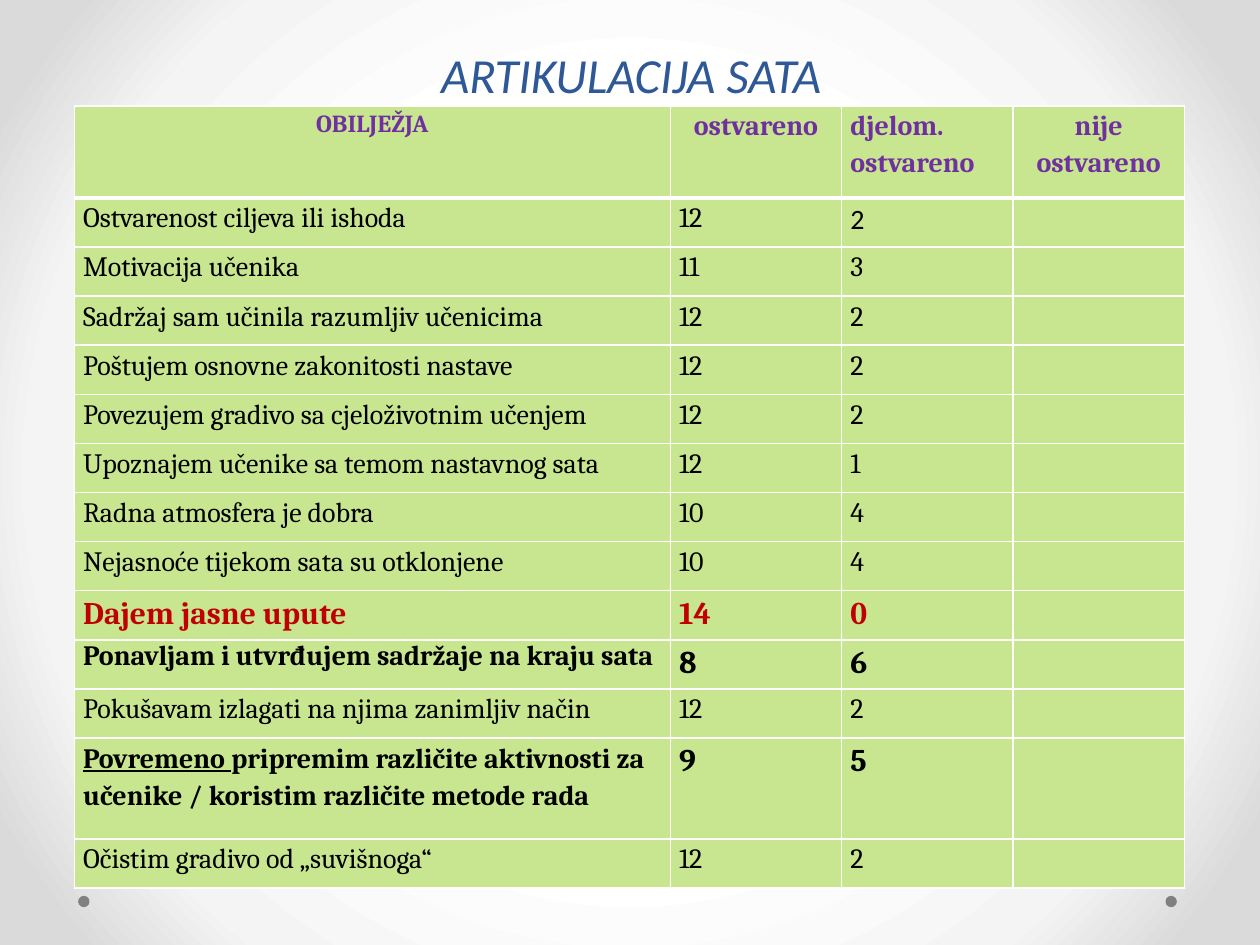
from dataclasses import dataclass

from pptx import Presentation
from pptx.dml.color import RGBColor
from pptx.enum.shapes import MSO_SHAPE
from pptx.enum.text import MSO_ANCHOR, PP_ALIGN
from pptx.oxml import parse_xml
from pptx.oxml.ns import nsdecls
from pptx.util import Inches, Pt


@dataclass(frozen=True)
class Theme:
    title_color: str = "2F5897"
    header_color: str = "7030A0"
    text_color: str = "000000"
    accent_color: str = "C00000"
    cell_fill: str = "C7E68F"
    border_color: str = "FFFFFF"
    dot_color: str = "808080"
    background_stops: tuple = ((50, "FFFFFF"), (76, "F4F4F4"), (92, "DADADA"))
    title_font: str = "Calibri"
    table_font: str = "Cambria"
    title_size: int = 28
    small_size: int = 14
    body_size: int = 16
    large_size: int = 18


class SlideBuilder:
    def __init__(self, slide, theme):
        self.slide = slide
        self.theme = theme

    def background(self):
        stops = "".join(
            f'<a:gs pos="{position * 1000}"><a:srgbClr val="{color}"/></a:gs>'
            for position, color in self.theme.background_stops
        )
        fill = self.slide.background.fill
        fill.solid()
        properties = self.slide.element.cSld.bg.bgPr
        properties.replace(properties[0], parse_xml(
            f'<a:gradFill {nsdecls("a")} rotWithShape="1"><a:gsLst>{stops}</a:gsLst>'
            '<a:path path="circle">'
            '<a:fillToRect l="50000" t="50000" r="50000" b="50000"/>'
            '</a:path></a:gradFill>'
        ))

    def dot(self, left, top, diameter):
        shape = self.slide.shapes.add_shape(
            MSO_SHAPE.OVAL, Inches(left), Inches(top), Inches(diameter), Inches(diameter)
        )
        shape.shadow.inherit = False
        shape.fill.solid()
        shape.fill.fore_color.rgb = RGBColor.from_string(self.theme.dot_color)
        shape.line.fill.background()

    def font(self, paragraph, size, color, name, bold=False, italic=False):
        font = paragraph.font
        font.size = Pt(size)
        font.name = name
        font.bold = bold
        font.italic = italic
        font.color.rgb = RGBColor.from_string(color)

    def title(self, text, left, top, width, height):
        frame = self.slide.shapes.add_textbox(
            Inches(left), Inches(top), Inches(width), Inches(height)
        ).text_frame
        frame.word_wrap = True
        frame.vertical_anchor = MSO_ANCHOR.BOTTOM
        paragraph = frame.paragraphs[0]
        paragraph.text = text
        paragraph.alignment = PP_ALIGN.CENTER
        paragraph.line_spacing = Pt(58)
        self.font(paragraph, self.theme.title_size, self.theme.title_color,
                  self.theme.title_font, italic=True)

    def table(self, left, top, column_widths, row_heights):
        table = self.slide.shapes.add_table(
            len(row_heights), len(column_widths), Inches(left), Inches(top),
            Inches(sum(column_widths)), Inches(sum(row_heights))
        ).table
        table.horz_banding = False
        for column, width in zip(table.columns, column_widths):
            column.width = Inches(width)
        for row, height in zip(table.rows, row_heights):
            row.height = Inches(height)
        return table

    def cell(self, cell, text, size, color, bold=False, alignment=PP_ALIGN.LEFT,
             name=None, spacing=1.15, top_border=1, bottom_border=1, underlined=""):
        cell.margin_left = cell.margin_right = Inches(0.07)
        cell.margin_top = cell.margin_bottom = 0
        paragraph = cell.text_frame.paragraphs[0]
        if underlined:
            run = paragraph.add_run()
            run.text = underlined
            run.font.underline = True
        if text:
            paragraph.add_run().text = text
        paragraph.alignment = alignment
        paragraph.line_spacing = spacing
        self.font(paragraph, size, color, name or self.theme.table_font, bold)
        self.borders(cell, top_border, bottom_border)
        cell.fill.solid()
        cell.fill.fore_color.rgb = RGBColor.from_string(self.theme.cell_fill)

    def borders(self, cell, top, bottom):
        properties = cell._tc.get_or_add_tcPr()
        for side, points in (("L", 1), ("R", 1), ("T", top), ("B", bottom)):
            properties.append(parse_xml(
                f'<a:ln{side} {nsdecls("a")} w="{Pt(points)}"><a:solidFill>'
                f'<a:srgbClr val="{self.theme.border_color}"/></a:solidFill></a:ln{side}>'
            ))


HEADERS = [
    ("OBILJEŽJA", PP_ALIGN.CENTER),
    ("ostvareno", PP_ALIGN.CENTER),
    ("djelom. ostvareno", PP_ALIGN.LEFT),
    ("nije ostvareno", PP_ALIGN.CENTER),
]
# Feature, achieved, partly achieved
RATINGS = [
    ("Ostvarenost ciljeva ili ishoda", 12, 2),
    ("Motivacija učenika", 11, 3),
    ("Sadržaj sam učinila razumljiv učenicima", 12, 2),
    ("Poštujem osnovne zakonitosti nastave", 12, 2),
    ("Povezujem gradivo sa cjeloživotnim učenjem", 12, 2),
    ("Upoznajem učenike sa temom nastavnog sata", 12, 1),
    ("Radna atmosfera je dobra", 10, 4),
    ("Nejasnoće tijekom sata su otklonjene", 10, 4),
    ("Dajem jasne upute", 14, 0),
    ("Ponavljam i utvrđujem sadržaje na kraju sata", 8, 6),
    ("Pokušavam izlagati na njima zanimljiv način", 12, 2),
    ("pripremim različite aktivnosti za učenike / koristim različite metode rada", 9, 5),
    ("Očistim gradivo od „suvišnoga“", 12, 2),
]
BEST_ROW, REVIEW_ROW, ACTIVITIES_ROW = 9, 10, 12


def main():
    theme = Theme()
    presentation = Presentation()
    presentation.slide_width = Inches(10)
    presentation.slide_height = Inches(7.5)
    slide = presentation.slides.add_slide(presentation.slide_layouts[6])
    builder = SlideBuilder(slide, theme)

    # Background, corner dots and title
    builder.background()
    for left in (0.62, 9.25):
        builder.dot(left, 7.11, 0.09)
    builder.title("ARTIKULACIJA SATA", 0.51, 0.02, 9, 0.85)

    # Table grid
    row_heights = [0.73] + [0.39] * len(RATINGS)
    row_heights[ACTIVITIES_ROW] = 0.8
    table = builder.table(0.59, 0.84, [4.73, 1.36, 1.36, 1.36], row_heights)

    # Header row
    for column, (text, alignment) in enumerate(HEADERS):
        size = theme.body_size if column else theme.small_size
        builder.cell(table.cell(0, column), text, size, theme.header_color, True,
                     alignment, bottom_border=3)

    # Rating rows, with the highlighted ones in bold
    for row, (feature, achieved, partly) in enumerate(RATINGS, start=1):
        bold = row in (BEST_ROW, REVIEW_ROW, ACTIVITIES_ROW)
        color = theme.accent_color if row == BEST_ROW else theme.text_color
        for column, text in enumerate((feature, str(achieved), str(partly), "")):
            large = row == BEST_ROW or (bold and column in (1, 2))
            builder.cell(
                table.cell(row, column), text,
                theme.large_size if large and text else theme.body_size, color, bold,
                name=theme.title_font if (row, column) == (1, 2) else None,
                spacing=1.0 if (row, column) == (REVIEW_ROW, 0) else 1.15,
                top_border=3 if row == 1 else 1,
                underlined="Povremeno " if (row, column) == (ACTIVITIES_ROW, 0) else "",
            )

    presentation.save("out.pptx")


if __name__ == "__main__":
    main()
